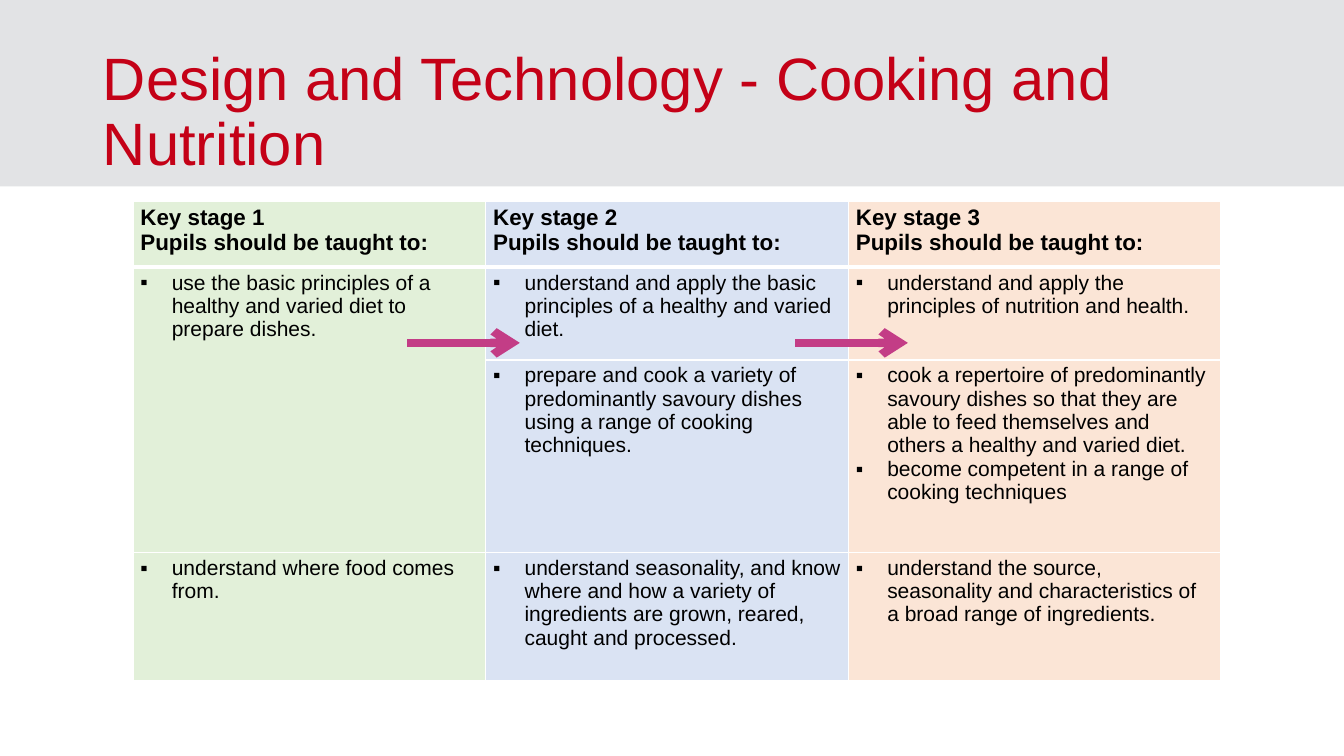
from dataclasses import dataclass

from lxml import etree
from pptx import Presentation
from pptx import util as u
from pptx.dml.color import RGBColor
from pptx.enum import shapes, text
from pptx.oxml.ns import qn


@dataclass(frozen=True)
class Theme:
    font: str = "Arial"
    title_size: float = 42.7
    heading_size: float = 16
    body_size: float = 15
    title: str = "C40117"
    band: str = "E2E3E5"
    ink: str = "000000"
    border: str = "FFFFFF"
    arrow: str = "C33D86"


@dataclass(frozen=True)
class KeyStage:
    heading: str
    width: float
    fill: str
    goals: tuple[tuple[str, ...], ...]


@dataclass(frozen=True)
class Arrow:
    left: float
    top: float = 8.64
    length: float = 2.84


THEME = Theme()
ROW_HEIGHTS = (1.65, 2.34, 4.85, 3.23)
STAGES = (
    KeyStage("Key stage 1", 8.89, "E2F0D9", (
        ("use the basic principles of a healthy and varied diet to prepare dishes.",),
        (),
        ("understand where food comes from.",),
    )),
    KeyStage("Key stage 2", 9.14, "DAE3F3", (
        ("understand and apply the basic principles of a healthy and varied diet.",),
        ("prepare and cook a variety of predominantly savoury dishes using a range of cooking techniques.",),
        ("understand seasonality, and know where and how a variety of ingredients are grown, reared, "
         "caught and processed.",),
    )),
    KeyStage("Key stage 3", 9.37, "FBE5D6", (
        ("understand and apply the principles of nutrition and health.",),
        ("cook a repertoire of predominantly savoury dishes so that they are able to feed themselves "
         "and others a healthy and varied diet.",
         "become competent in a range of cooking techniques"),
        ("understand the source, seasonality and characteristics of a broad range of ingredients.",),
    )),
)
ARROWS = (Arrow(10.26), Arrow(20.04))


def rgb(value: str) -> RGBColor:
    return RGBColor.from_string(value)


def style_font(font, size: float, colour: str, bold: bool = False) -> None:
    font.name = THEME.font
    font.size = u.Pt(size)
    font.bold = bold
    font.color.rgb = rgb(colour)


def add_title(page, wording: str) -> None:
    title = page.shapes.title
    title.left, title.top = u.Cm(2.34), u.Cm(1.02)
    title.width, title.height = u.Cm(27.94), u.Cm(3.68)
    frame = title.text_frame
    frame.text = wording
    frame.word_wrap = True
    frame.auto_size = text.MSO_AUTO_SIZE.NONE
    frame.vertical_anchor = text.MSO_ANCHOR.MIDDLE
    para = frame.paragraphs[0]
    para.alignment = text.PP_ALIGN.LEFT
    para.line_spacing = 0.9
    for span in para.runs:
        style_font(span.font, THEME.title_size, THEME.title)


def add_band(page, width: int) -> None:
    band = page.shapes.add_shape(shapes.MSO_SHAPE.RECTANGLE, 0, 0, width, u.Cm(4.7))
    band.shadow.inherit = False
    band.fill.solid()
    band.fill.fore_color.rgb = rgb(THEME.band)
    band.line.fill.background()
    page.shapes.title.element.addprevious(band.element)


def add_borders(cell, top: float, bottom: float) -> None:
    properties = cell._tc.get_or_add_tcPr()
    sides = (("lnL", 1), ("lnR", 1), ("lnT", top), ("lnB", bottom))
    for position, (side, width) in enumerate(sides):
        border = etree.Element(qn(f"a:{side}"), w=str(u.Pt(width)))
        fill = etree.SubElement(border, qn("a:solidFill"))
        etree.SubElement(fill, qn("a:srgbClr"), val=THEME.border)
        properties.insert(position, border)


def add_bullet(para) -> None:
    properties = para._p.get_or_add_pPr()
    indent = u.Cm(0.79)
    properties.set("marL", str(indent))
    properties.set("indent", str(-indent))
    etree.SubElement(properties, qn("a:buFont"), typeface=THEME.font)
    etree.SubElement(properties, qn("a:buChar"), char="▪")


def fill_cell(cell, lines: tuple[str, ...], colour: str, heading: bool) -> None:
    cell.fill.solid()
    cell.fill.fore_color.rgb = rgb(colour)
    cell.margin_left = cell.margin_right = u.Cm(0.19)
    cell.margin_top = cell.margin_bottom = u.Cm(0.1)
    cell.vertical_anchor = text.MSO_ANCHOR.TOP
    if not lines:
        return
    cell.text_frame.text = "\n".join(lines)
    size = THEME.heading_size if heading else THEME.body_size
    for para in cell.text_frame.paragraphs:
        if not heading:
            add_bullet(para)
        for span in para.runs:
            style_font(span.font, size, THEME.ink, heading)


def add_curriculum(page) -> None:
    frame = page.shapes.add_table(
        len(ROW_HEIGHTS), len(STAGES), u.Cm(3.35), u.Cm(5.08),
        u.Cm(sum(stage.width for stage in STAGES)), u.Cm(sum(ROW_HEIGHTS)))
    table = frame.table
    table.first_row = table.horz_banding = False
    for row, height in zip(table.rows, ROW_HEIGHTS):
        row.height = u.Cm(height)
    for column, stage in enumerate(STAGES):
        table.columns[column].width = u.Cm(stage.width)
        contents = ((stage.heading, "Pupils should be taught to:"), *stage.goals)
        for row, lines in enumerate(contents):
            cell = table.cell(row, column)
            fill_cell(cell, lines, stage.fill, heading=row == 0)
            add_borders(cell, top=3 if row == 1 else 1, bottom=3 if row == 0 else 1)
    table.cell(1, 0).merge(table.cell(2, 0))


def add_arrow(page, arrow: Arrow) -> None:
    top = u.Cm(arrow.top)
    line = page.shapes.add_connector(
        shapes.MSO_CONNECTOR.STRAIGHT,
        u.Cm(arrow.left), top, u.Cm(arrow.left + arrow.length), top)
    line.line.color.rgb = rgb(THEME.arrow)
    line.line.width = u.Pt(6)
    etree.SubElement(line.line._get_or_add_ln(), qn("a:tailEnd"), type="arrow")
    etree.SubElement(line.element.spPr, qn("a:effectLst"))


def main() -> None:
    deck = Presentation()
    deck.slide_width, deck.slide_height = u.Cm(33.87), u.Cm(19.05)
    page = deck.slides.add_slide(deck.slide_layouts.get_by_name("Title Only"))
    add_title(page, "Design and Technology - Cooking and Nutrition")
    add_band(page, deck.slide_width)
    add_curriculum(page)
    for arrow in ARROWS:
        add_arrow(page, arrow)
    deck.save("out.pptx")


if __name__ == "__main__":
    main()
